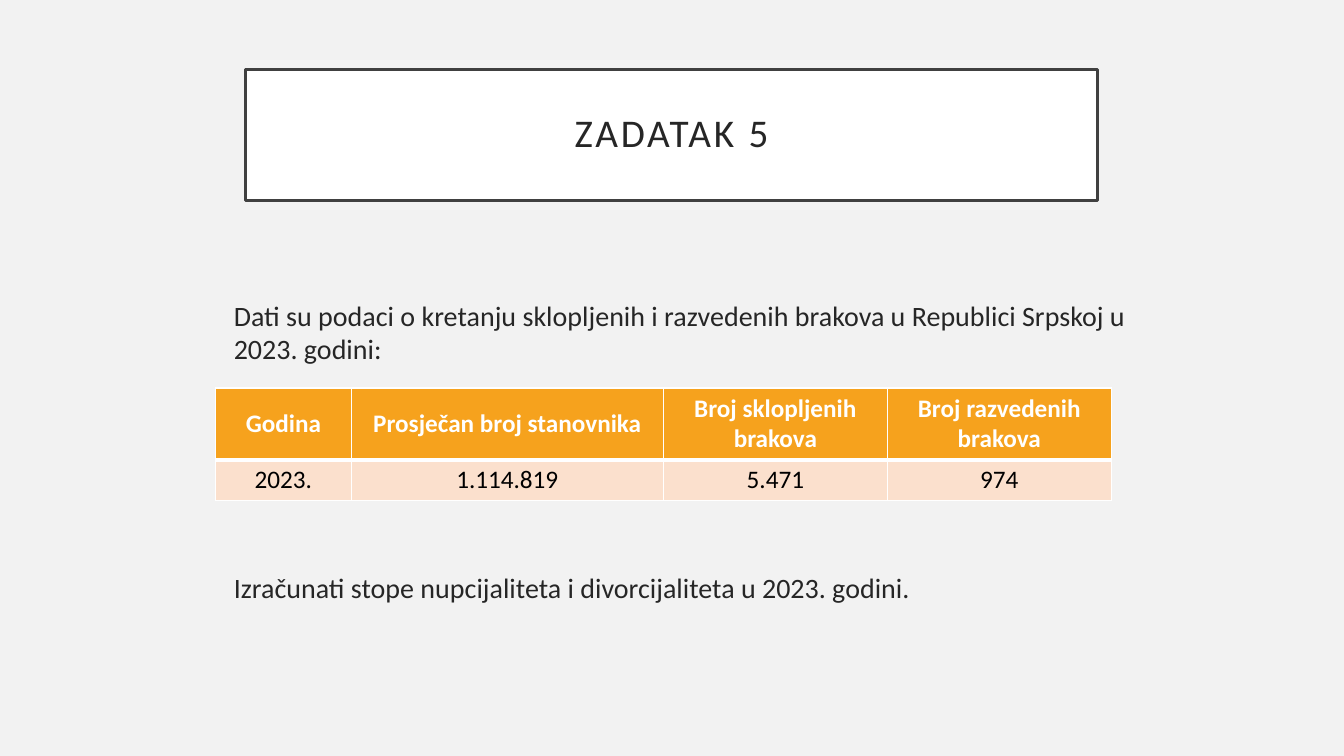
"""Build the slide of task 5 on marriage and divorce rates."""
from dataclasses import dataclass

from lxml import etree
from pptx import Presentation
from pptx import util as u
from pptx.dml import color
from pptx.enum import text
from pptx.oxml import ns


@dataclass(frozen=True)
class Theme:
    """Hold the colours and type sizes."""
    font: str = "Calibri"
    back: str = "F2F2F2"
    white: str = "FFFFFF"
    black: str = "000000"
    ink: str = "262626"
    frame: str = "404040"
    head: str = "F6A21D"
    row: str = "FBE0CD"
    big: int = 28
    mid: int = 20
    small: int = 18


def rgb(code):
    """Turn a hex code into a colour."""
    return color.RGBColor.from_string(code)


def write(para, words, font, size, ink, bold=False, align="LEFT",
          before=0, lead=1.0, track=0):
    """Write formatted words into a paragraph."""
    para.alignment = getattr(text.PP_ALIGN, align)
    para.space_before, para.space_after = u.Pt(before), u.Pt(0)
    para.line_spacing = lead
    run = para.add_run()
    run.text = words
    run.font.name, run.font.size, run.font.bold = font, u.Pt(size), bold
    run.font.color.rgb = rgb(ink)
    if track:
        run.font._element.set("spc", str(track * 100))


def edge(cell, side, width, ink):
    """Draw one border of a cell."""
    line = etree.SubElement(cell._tc.get_or_add_tcPr(), ns.qn(f"a:ln{side}"),
                            w=str(u.Pt(width)))
    fill = etree.SubElement(line, ns.qn("a:solidFill"))
    etree.SubElement(fill, ns.qn("a:srgbClr"), val=ink)


class Deck:
    """Keep the style and the current slide."""

    def __init__(self, theme):
        """Open a deck with one blank page."""
        self.look = theme
        self.deck = Presentation()
        self.deck.slide_width, self.deck.slide_height = u.Pt(960), u.Pt(540)
        self.page = self.deck.slides.add_slide(self.deck.slide_layouts[1])
        fill = self.page.background.fill
        fill.solid()
        fill.fore_color.rgb = rgb(theme.back)

    def place(self, shape, box):
        """Move a placeholder and return its text frame."""
        shape.left, shape.top, shape.width, shape.height = map(u.Pt, box)
        frame = shape.text_frame
        frame.auto_size = text.MSO_AUTO_SIZE.NONE
        frame.word_wrap = True
        return frame

    def title(self, words, box):
        """Set the framed title."""
        look, shape = self.look, self.page.shapes.title
        frame = self.place(shape, box)
        shape.fill.solid()
        shape.fill.fore_color.rgb = rgb(look.white)
        shape.line.color.rgb = rgb(look.frame)
        shape.line.width = u.Pt(2.5)
        frame.vertical_anchor = text.MSO_ANCHOR.MIDDLE
        for side in ("left", "top", "right", "bottom"):
            setattr(frame, f"margin_{side}", u.Pt(14.4))
        write(frame.paragraphs[0], words, look.font, look.big, look.ink,
              align="CENTER", lead=0.9, track=2)

    def body(self, items, box):
        """Set plain paragraphs, each given with the gap above it."""
        look = self.look
        frame = self.place(self.page.placeholders[1], box)
        frame.vertical_anchor = text.MSO_ANCHOR.TOP
        for n, (words, gap) in enumerate(items):
            para = frame.add_paragraph() if n else frame.paragraphs[0]
            write(para, words, look.font, look.mid, look.ink, before=gap)
            props = para._p.get_or_add_pPr()
            props.set("marL", "0")
            props.set("indent", "0")
            etree.SubElement(props, ns.qn("a:buNone"))

    def table(self, rows, left, top, widths, heights):
        """Add a table with a coloured header row."""
        look = self.look
        grid = self.page.shapes.add_table(
            len(rows), len(widths), u.Pt(left), u.Pt(top),
            u.Pt(sum(widths)), u.Pt(sum(heights))).table
        for col, width in zip(grid.columns, widths):
            col.width = u.Pt(width)
        for n, (row, high) in enumerate(zip(rows, heights)):
            grid.rows[n].height = u.Pt(high)
            for cell, words in zip(grid.rows[n].cells, row):
                self.cell(cell, words, n == 0)

    def cell(self, cell, words, head):
        """Fill, border and write one table cell."""
        look = self.look
        edges = dict(L=1, R=1, T=1, B=3) if head else dict(L=1, R=1, T=3, B=1)
        for side, width in edges.items():
            edge(cell, side, width, look.white)
        cell.fill.solid()
        cell.fill.fore_color.rgb = rgb(look.head if head else look.row)
        cell.vertical_anchor = text.MSO_ANCHOR.MIDDLE
        write(cell.text_frame.paragraphs[0], words, look.font, look.small,
              look.white if head else look.black, bold=head, align="CENTER")


def main():
    """Build and save the slide."""
    deck = Deck(Theme())
    deck.title("ZADATAK 5", (175.5, 49.5, 608.5, 93.6))
    deck.body([
        ("Dati su podaci o kretanju sklopljenih i razvedenih brakova "
         "u Republici Srpskoj u 2023. godini:", 0),
        ("Izračunati stope nupcijaliteta i divorcijaliteta u 2023. godini.",
         146),
    ], (159.8, 209.5, 666.7, 267))
    deck.table([
        ("Godina", "Prosječan broj stanovnika", "Broj sklopljenih brakova",
         "Broj razvedenih brakova"),
        ("2023.", "1.114.819", "5.471", "974"),
    ], 154.1, 277.2, (96.8, 223, 160, 160), (51, 29.2))
    deck.deck.save("out.pptx")


if __name__ == "__main__":
    main()
